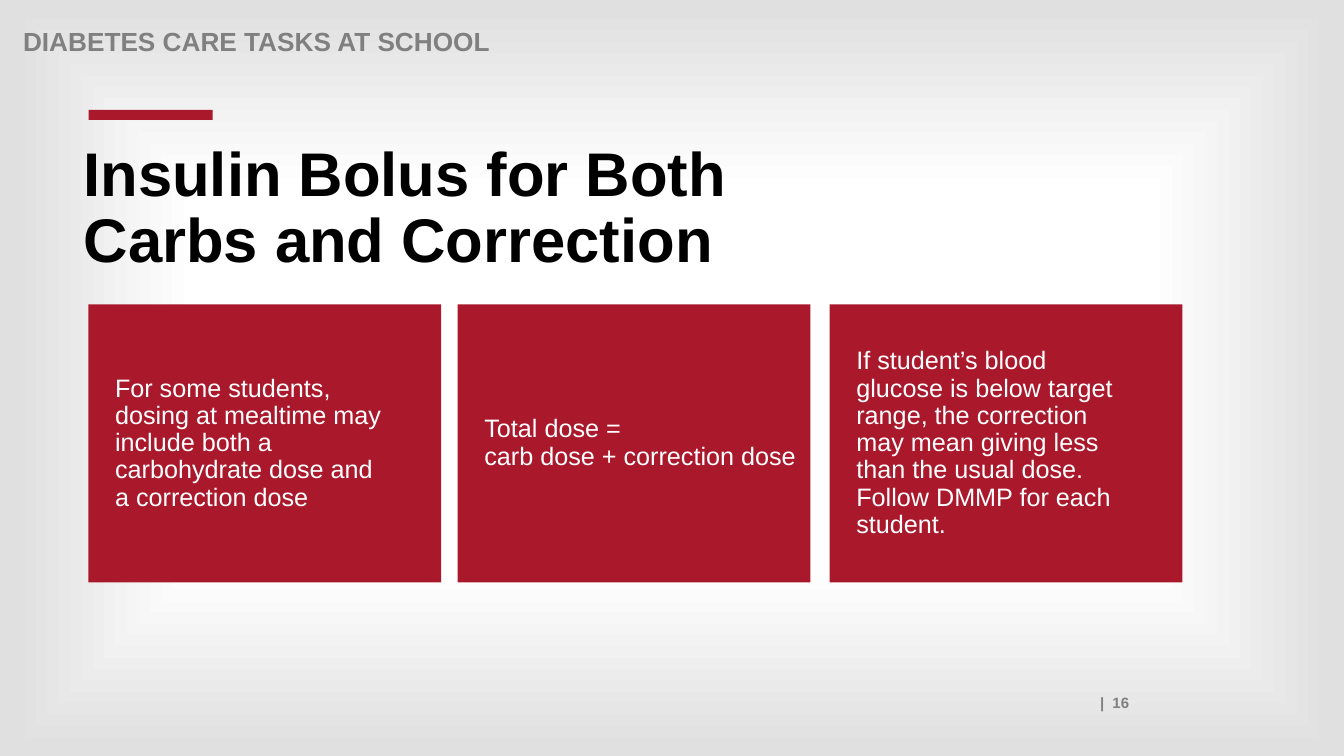
from pptx import Presentation
from pptx.dml.color import RGBColor
from pptx.enum.shapes import MSO_SHAPE
from pptx.enum.text import MSO_ANCHOR, PP_ALIGN
from pptx.oxml import parse_xml
from pptx.oxml.ns import nsdecls, qn
from pptx.util import Pt

RECTANGLE = MSO_SHAPE.RECTANGLE
TOP, MIDDLE = MSO_ANCHOR.TOP, MSO_ANCHOR.MIDDLE
LEFT, RIGHT = PP_ALIGN.LEFT, PP_ALIGN.RIGHT

FONT = "Arial"
RED, GRAY, BLACK, WHITE = "AA182C", "808080", "000000", "FFFFFF"
BACKGROUND_STOPS = [(12, "FFFFFF"), (50, "FFFFFF"), (98, "E0E0E0")]

CARD_TOP, CARD_WIDTH, CARD_HEIGHT = 217.4, 252, 198.7
TEXT_INDENT = 12
# Card left edge, text width, lines of text
CARDS = [
    (63.1, 212.4, ["For some students, dosing at mealtime may include both "
                   "a carbohydrate dose and a correction dose"]),
    (326.9, 240.5, ["Total dose =", "carb dose + correction dose"]),
    (592.6, 212.4, ["If student’s blood glucose is below target range, the "
                    "correction may mean giving less than the usual dose. "
                    "Follow DMMP for each student."]),
]


def color(value):
    return RGBColor.from_string(value)


def set_background(slide):
    """Fill the slide with a gradient that spreads from its centre."""
    fill = slide.background.fill
    fill.gradient()
    stops = "".join(
        f'<a:gs pos="{position * 1000}"><a:srgbClr val="{value}"/></a:gs>'
        for position, value in BACKGROUND_STOPS)
    gradient = parse_xml(
        f'<a:gradFill {nsdecls("a")} rotWithShape="1"><a:gsLst>{stops}</a:gsLst>'
        '<a:path path="shape"><a:fillToRect l="50000" t="50000" r="50000" '
        'b="50000"/></a:path></a:gradFill>')
    default = slide.element.find(".//" + qn("a:gradFill"))
    default.getparent().replace(default, gradient)


def add_block(slide, left, top, width, height):
    shape = slide.shapes.add_shape(RECTANGLE, Pt(left), Pt(top), Pt(width), Pt(height))
    shape.shadow.inherit = False
    shape.fill.solid()
    shape.fill.fore_color.rgb = color(RED)
    shape.line.fill.background()


def add_text(slide, left, top, width, height, lines, size, text_color,
             bold=False, anchor=TOP, align=LEFT, line_spacing=0.9, space_before=13.3):
    box = slide.shapes.add_textbox(Pt(left), Pt(top), Pt(width), Pt(height))
    frame = box.text_frame
    frame.word_wrap = True
    frame.vertical_anchor = anchor
    paragraph = frame.paragraphs[0]
    paragraph.alignment = align
    paragraph.line_spacing = line_spacing
    paragraph.space_before = Pt(space_before)
    for index, line in enumerate(lines):
        if index:
            paragraph.add_line_break()
        run = paragraph.add_run()
        run.text = line
        run.font.name = FONT
        run.font.size = Pt(size)
        run.font.bold = bold
        run.font.color.rgb = color(text_color)


def add_card(slide, left, text_width, lines):
    add_block(slide, left, CARD_TOP, CARD_WIDTH, CARD_HEIGHT)
    add_text(slide, left + TEXT_INDENT, CARD_TOP, text_width, CARD_HEIGHT,
             lines, 18, WHITE, anchor=MIDDLE)


def main():
    presentation = Presentation()
    presentation.slide_width, presentation.slide_height = Pt(960), Pt(540)
    slide = presentation.slides.add_slide(presentation.slide_layouts[6])
    set_background(slide)

    # Page number and section header
    add_text(slide, 87.1, 491.8, 726.5, 20.2, ["|\u00a0 16"], 10.7, GRAY, bold=True,
             align=RIGHT, line_spacing=1, space_before=0)
    add_text(slide, 9.4, 17.3, 792, 20.2, ["DIABETES CARE TASKS AT SCHOOL"],
             18.7, GRAY, bold=True)

    # Accent bar and title
    add_block(slide, 63.4, 78.5, 88.6, 7.2)
    add_text(slide, 52.6, 98.6, 792, 66.2,
             ["Insulin Bolus for Both", "Carbs and Correction"], 44, BLACK, bold=True)

    # Three message cards
    for left, text_width, lines in CARDS:
        add_card(slide, left, text_width, lines)

    presentation.save("out.pptx")


if __name__ == "__main__":
    main()
